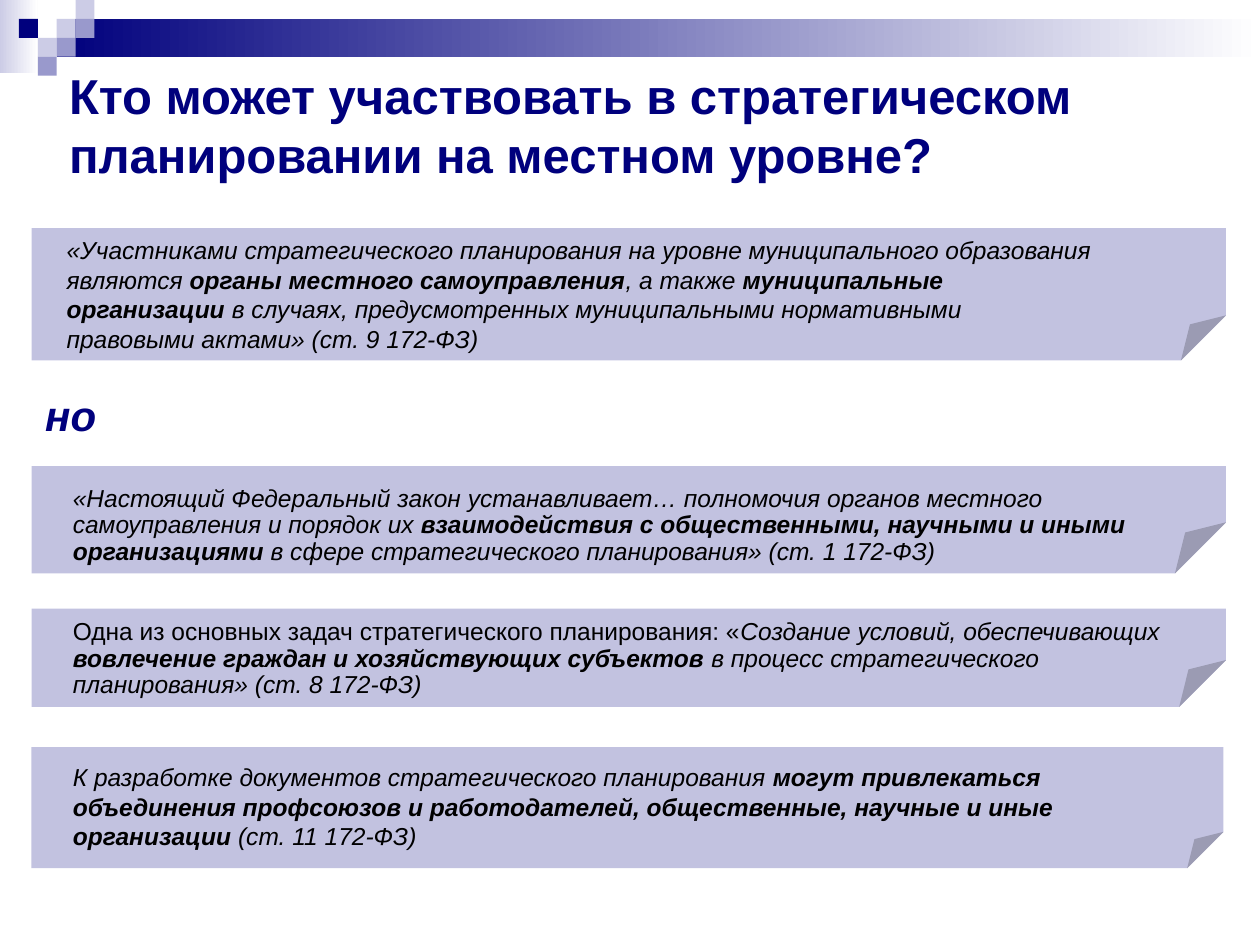
from lxml import etree
from pptx import Presentation
from pptx.dml.color import RGBColor
from pptx.enum.shapes import MSO_SHAPE
from pptx.enum.text import MSO_ANCHOR, MSO_AUTO_SIZE
from pptx.oxml.ns import qn
from pptx.util import Inches, Pt

RECTANGLE = MSO_SHAPE.RECTANGLE
FOLDED_CORNER = MSO_SHAPE.FOLDED_CORNER
TOP, MIDDLE = MSO_ANCHOR.TOP, MSO_ANCHOR.MIDDLE
FIT_SHAPE, NO_FIT = MSO_AUTO_SIZE.SHAPE_TO_FIT_TEXT, MSO_AUTO_SIZE.NONE

COLUMNS, ROWS = 100, 75
SLIDE_WIDTH, SLIDE_HEIGHT = Inches(10), Inches(7.5)
NAVY, LAVENDER, VIOLET, PAPER = "00007D", "CCCCE6", "9999CC", "C2C2E0"
WHITE, BLACK = "FFFFFF", "000000"

PLAIN = {"size": Pt(14), "name": "Arial", "bold": False, "italic": False}
ITALIC = {**PLAIN, "italic": True}
STRONG = {**ITALIC, "bold": True}
HEADING = {**PLAIN, "size": Pt(28), "bold": True}
CONTRAST = {**STRONG, "size": Pt(24)}

NOTES = [
    {
        "box": (2.5, 18.1, 94.8, 10.5), "fold": 0.34,
        "inset": (1.8, 0.1, 83.5, 10.4), "spacing": 1.0,
        "runs": [
            ("«Участниками стратегического планирования на уровне муниципального образования являются ", ITALIC),
            ("органы местного самоуправления", STRONG),
            (", а также ", ITALIC),
            ("муниципальные организации ", STRONG),
            ("в случаях, предусмотренных муниципальными нормативными правовыми актами» (ст. 9 172-ФЗ)", ITALIC),
        ],
    },
    {
        "box": (2.5, 37, 94.8, 8.5), "fold": 0.476,
        "inset": (2.3, 1.1, 90, 7.4), "spacing": 0.9,
        "runs": [
            ("«Настоящий Федеральный закон устанавливает… полномочия органов местного самоуправления "
             "и порядок их ", ITALIC),
            ("взаимодействия с общественными, научными и иными организациями", STRONG),
            (" в сфере стратегического планирования» (ст. 1 172-ФЗ)", ITALIC),
        ],
    },
    {
        "box": (2.5, 48.3, 94.8, 7.8), "fold": 0.476,
        "inset": (2.3, 0.4, 91.6, 7.4), "spacing": 0.9,
        "runs": [
            ("Одна из основных задач стратегического планирования: «", PLAIN),
            ("Создание условий, обеспечивающих ", ITALIC),
            ("вовлечение граждан и хозяйствующих субъектов ", STRONG),
            ("в процесс стратегического планирования» (ст. 8 172-ФЗ)", ITALIC),
        ],
    },
    {
        "box": (2.5, 59.3, 94.6, 9.6), "fold": 0.299,
        "inset": (2.3, 0.7, 86.9, 8.1), "spacing": 1.0,
        "runs": [
            ("К разработке документов стратегического планирования ", ITALIC),
            ("могут привлекаться объединения профсоюзов и работодателей, общественные, научные "
             "и иные организации ", STRONG),
            ("(ст. 11 172-ФЗ)", ITALIC),
        ],
    },
]


def color(value):
    return RGBColor.from_string(value)


def place(box):
    left, top, width, height = box
    column, row = SLIDE_WIDTH / COLUMNS, SLIDE_HEIGHT / ROWS
    return [round(length) for length in (left * column, top * row, width * column, height * row)]


def add_block(slide, kind, box, fills):
    shape = slide.shapes.add_shape(kind, *place(box))
    shape.shadow.inherit = False
    shape.line.fill.background()
    if len(fills) == 1:
        shape.fill.solid()
        shape.fill.fore_color.rgb = color(fills[0])
    else:
        shape.fill.gradient()
        shape.fill.gradient_angle = 0
        for stop, value in zip(shape.fill.gradient_stops, fills):
            stop.color.rgb = color(value)
    return shape


def set_fold(shape, fold):
    adjustments = next(shape.element.iter(qn("a:avLst")))
    formula = f"val {round(fold * 100000)}"
    etree.SubElement(adjustments, qn("a:gd"), name="adj", fmla=formula)


def add_text(slide, box, runs, text_color=BLACK, spacing=1.0, wrap=True, anchor=TOP, fit=FIT_SHAPE):
    frame = slide.shapes.add_textbox(*place(box)).text_frame
    frame_format = {"word_wrap": wrap, "vertical_anchor": anchor, "auto_size": fit}
    for attribute, value in frame_format.items():
        setattr(frame, attribute, value)
    paragraph = frame.paragraphs[0]
    paragraph.line_spacing = spacing
    for text, font_format in runs:
        run = paragraph.add_run()
        run.text = text
        run.font.color.rgb = color(text_color)
        for attribute, value in font_format.items():
            setattr(run.font, attribute, value)


def add_banner(slide, box):
    left, top, width, height = box
    cell = height / 4
    add_block(slide, RECTANGLE, (left, top, 2 * cell, height - 0.2), (LAVENDER, WHITE))
    add_block(slide, RECTANGLE, (left + 3 * cell, top + cell, width - 3 * cell, 2 * cell), (NAVY, WHITE))
    squares = [
        (3, 1, LAVENDER), (4, 0, LAVENDER), (4, 1, VIOLET), (2, 2, LAVENDER),
        (1, 1, NAVY), (3, 2, VIOLET), (2, 3, VIOLET),
    ]
    for column, row, fill in squares:
        square = (left + column * cell, top + row * cell, cell, cell)
        add_block(slide, RECTANGLE, square, (fill,))


def add_note(slide, box, fold, inset, spacing, runs):
    set_fold(add_block(slide, FOLDED_CORNER, box, (PAPER,)), fold)
    left, top, width, height = inset
    add_text(slide, (box[0] + left, box[1] + top, width, height), runs, spacing=spacing)


def main():
    presentation = Presentation()
    presentation.slide_width, presentation.slide_height = SLIDE_WIDTH, SLIDE_HEIGHT
    slide = presentation.slides.add_slide(presentation.slide_layouts[6])
    add_banner(slide, (0, 0, COLUMNS, 6))
    title = "Кто может участвовать в стратегическом планировании на местном уровне?"
    add_text(slide, (4.5, 5.2, 93, 9.4), [(title, HEADING)], NAVY, anchor=MIDDLE, fit=NO_FIT)
    for note in NOTES:
        add_note(slide, **note)
    add_text(slide, (2.6, 30.4, 6.1, 5), [("но", CONTRAST)], NAVY, wrap=False)
    presentation.save("out.pptx")


if __name__ == "__main__":
    main()
